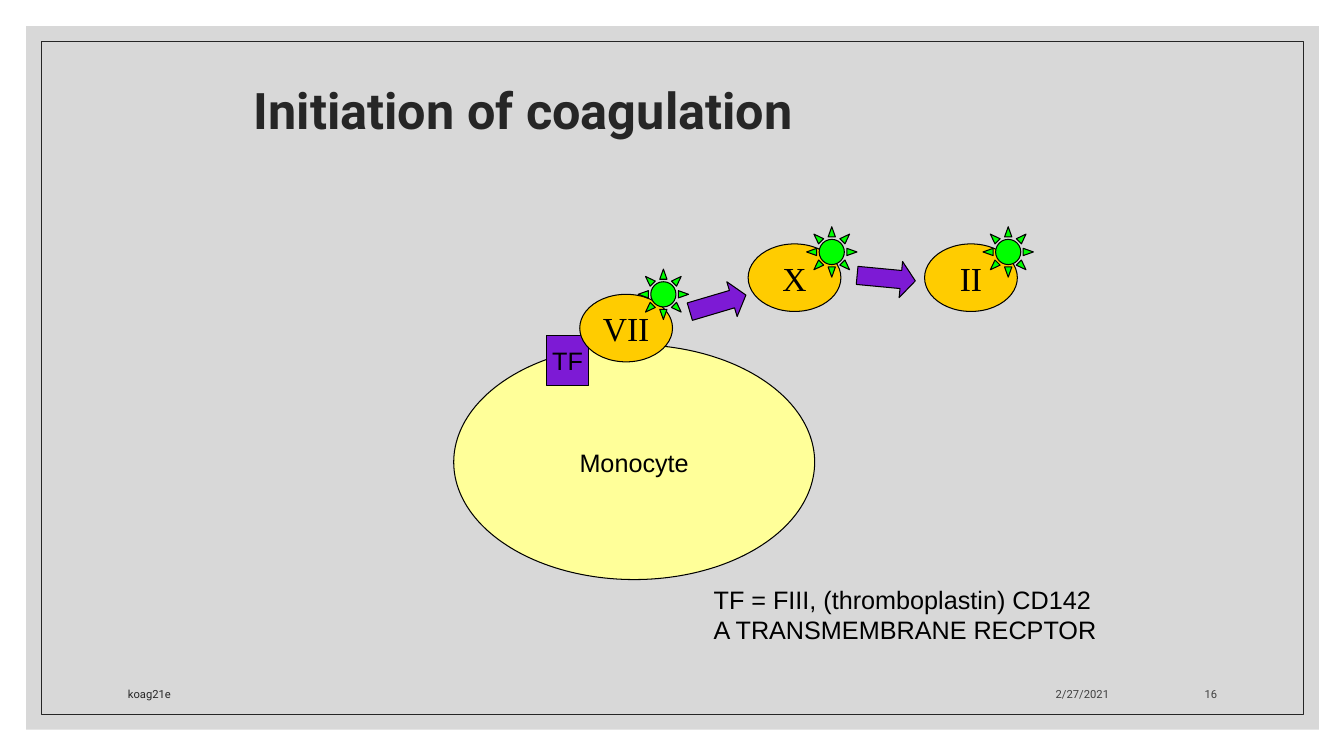
from dataclasses import dataclass

import pptx
import pptx.dml.color
import pptx.enum.shapes
import pptx.enum.text
import pptx.oxml
import pptx.oxml.ns
import pptx.util

Inches, Pt = pptx.util.Inches, pptx.util.Pt
RGBColor = pptx.dml.color.RGBColor
MSO = pptx.enum.shapes.MSO_SHAPE
ANCHOR = pptx.enum.text.MSO_ANCHOR
ALIGN = pptx.enum.text.PP_ALIGN

BLACK = RGBColor(0x00, 0x00, 0x00)
DARK = RGBColor(0x26, 0x26, 0x26)
GREY = RGBColor(0x40, 0x40, 0x40)
PANEL = RGBColor(0xBF, 0xBF, 0xBF)
YELLOW = RGBColor(0xFF, 0xFF, 0x99)
PURPLE = RGBColor(0x7D, 0x1A, 0xD5)
ORANGE = RGBColor(0xFF, 0xCC, 0x00)
GREEN = RGBColor(0x00, 0xFF, 0x00)

BODY = {"name": "Arial", "size": Pt(18)}
FACTOR = {"name": "Times New Roman", "size": Pt(24)}
TITLE = {"name": "Roboto", "size": Pt(36), "bold": True}
FOOTER = {"name": "Roboto", "size": Pt(8)}


@dataclass
class Figure:
    kind: MSO
    box: tuple[float, float, float, float]
    fill: RGBColor | None
    label: str = ""
    font: dict | None = None
    rotation: float = 0
    adjustments: tuple[float, ...] = ()
    line: RGBColor = BLACK
    weight: float = 0.75


@dataclass
class Label:
    box: tuple[float, float, float, float]
    lines: list[str]
    font: dict
    color: RGBColor
    anchor: ANCHOR = ANCHOR.BOTTOM
    align: ALIGN = ALIGN.LEFT
    wrap: bool = True
    spacing: float = 1.0


def write(tf, lines: list[str], font: dict, color: RGBColor, align: ALIGN,
          spacing: float = 1.0) -> None:
    for i, line in enumerate(lines):
        p = tf.paragraphs[0] if i == 0 else tf.add_paragraph()
        p.alignment = align
        p.line_spacing = spacing
        r = p.add_run()
        r.text = line
        for name, value in font.items():
            setattr(r.font, name, value)
        r.font.color.rgb = color


def draw_figure(shapes, fig: Figure):
    sp = shapes.add_shape(fig.kind, *map(Inches, fig.box))
    sp.shadow.inherit = False
    sp.rotation = fig.rotation
    for i, value in enumerate(fig.adjustments):
        sp.adjustments[i] = value
    if fig.fill is None:
        sp.fill.background()
    else:
        sp.fill.solid()
        sp.fill.fore_color.rgb = fig.fill
    if fig.weight:
        sp.line.color.rgb = fig.line
        sp.line.width = Pt(fig.weight)
    else:
        sp.line.fill.background()
    if fig.label:
        tf = sp.text_frame
        tf.word_wrap = False
        tf.vertical_anchor = ANCHOR.MIDDLE
        write(tf, [fig.label], fig.font, BLACK, ALIGN.CENTER)
    return sp


def draw_label(shapes, label: Label) -> None:
    tf = shapes.add_textbox(*map(Inches, label.box)).text_frame
    tf.word_wrap = label.wrap
    tf.vertical_anchor = label.anchor
    write(tf, label.lines, label.font, label.color, label.align, label.spacing)


def set_opacity(sp, percent: int) -> None:
    color = sp.fill._xPr.find(".//" + pptx.oxml.ns.qn("a:srgbClr"))
    color.append(pptx.oxml.parse_xml(
        f'<a:alpha {pptx.oxml.ns.nsdecls("a")} val="{percent * 1000}"/>'))


def factor(name: str, left: float, top: float) -> Figure:
    return Figure(MSO.OVAL, (left, top, 0.92, 0.67), ORANGE, name, FACTOR)


def activation(left: float, top: float) -> Figure:
    return Figure(MSO.SUN, (left, top, 0.5, 0.5), GREEN, adjustments=(0.25,))


def arrow(left: float, top: float, rotation: float) -> Figure:
    return Figure(MSO.RIGHT_ARROW, (left, top, 0.58, 0.36), PURPLE,
                  rotation=rotation, adjustments=(0.5, 0.4))


BACKDROP = Figure(MSO.RECTANGLE, (0.26, 0.26, 12.82, 6.98), PANEL, weight=0)

FIGURES = [
    Figure(MSO.RECTANGLE, (0.41, 0.41, 12.52, 6.68), None, line=DARK, weight=0.5),
    Figure(MSO.OVAL, (4.5, 3.42, 3.58, 2.33), YELLOW, "Monocyte", BODY),
    Figure(MSO.RECTANGLE, (5.42, 3.33, 0.42, 0.5), PURPLE, "TF", BODY),
    factor("VII", 5.75, 2.92),
    factor("X", 7.42, 2.42),
    factor("II", 9.17, 2.42),
    activation(6.33, 2.67),
    activation(8, 2.25),
    activation(9.75, 2.25),
    arrow(6.83, 2.83, 343.5),
    arrow(8.5, 2.58, 5.4),
]

LABELS = [
    Label((2.42, 0.58, 7.33, 1.08), ["Initiation of coagulation"], TITLE, DARK,
          ANCHOR.MIDDLE, spacing=0.9),
    Label((6.98, 5.75, 4.02, 1),
          ["TF = FIII, (thromboplastin) CD142", "A TRANSMEMBRANE RECPTOR"],
          BODY, BLACK, ANCHOR.TOP, wrap=False),
    Label((7.94, 6.6, 3.16, 0.4), ["2/27/2021"], FOOTER, GREY, align=ALIGN.RIGHT),
    Label((1.17, 6.6, 6.36, 0.4), ["koag21e"], FOOTER, DARK),
    Label((11.25, 6.6, 0.92, 0.4), ["16"], FOOTER, GREY, align=ALIGN.RIGHT),
]


def main() -> None:
    prs = pptx.Presentation()
    prs.slide_width, prs.slide_height = Inches(13.33), Inches(7.5)
    s = prs.slides.add_slide(prs.slide_layouts[6])
    set_opacity(draw_figure(s.shapes, BACKDROP), 60)
    for fig in FIGURES:
        draw_figure(s.shapes, fig)
    for label in LABELS:
        draw_label(s.shapes, label)
    prs.save("out.pptx")


if __name__ == "__main__":
    main()
